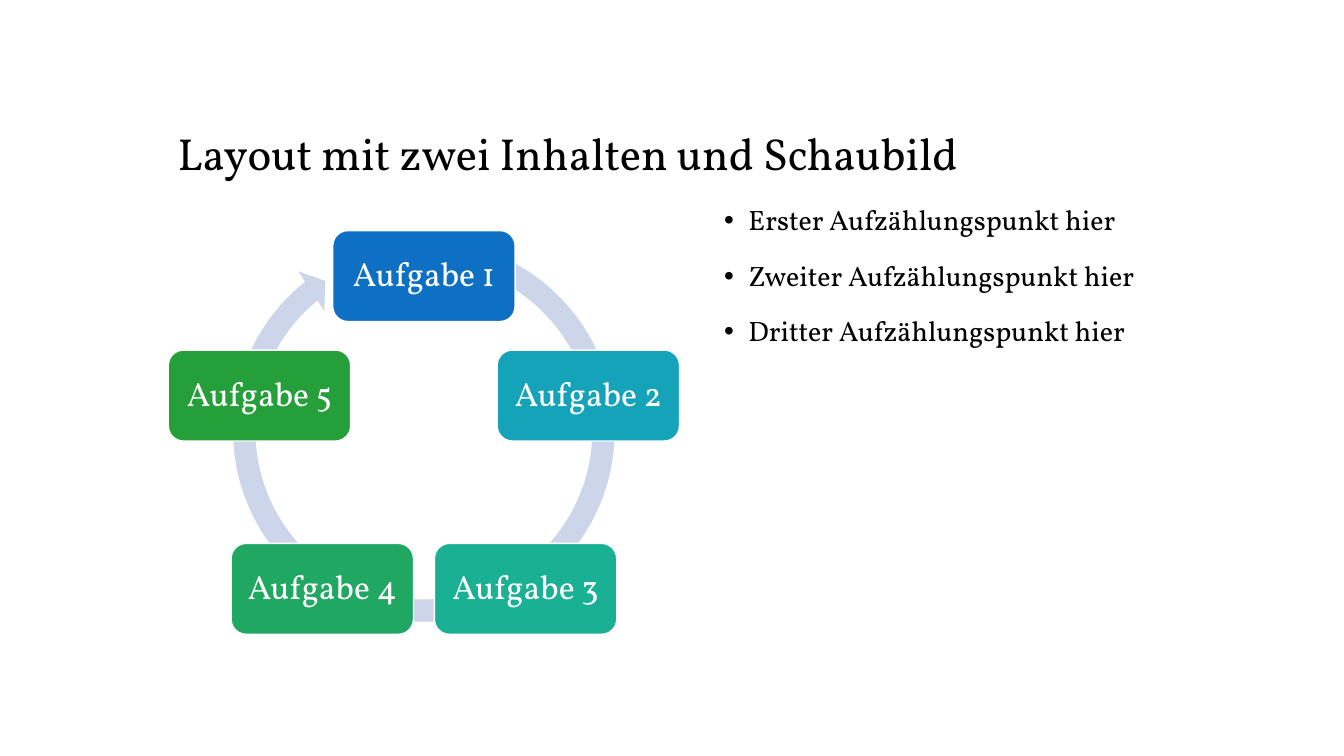
from math import cos, pi, sin

from lxml.etree import SubElement
from pptx import Presentation
from pptx.dml.color import RGBColor
from pptx.enum.shapes import MSO_SHAPE
from pptx.enum.text import MSO_ANCHOR, PP_ALIGN
from pptx.oxml.ns import qn
from pptx.util import Pt

# Content
TITLE = "Layout mit zwei Inhalten und Schaubild"
POINTS = [
    "Erster Aufzählungspunkt hier",
    "Zweiter Aufzählungspunkt hier",
    "Dritter Aufzählungspunkt hier",
]
TASKS = [
    ("Aufgabe 1", "0E70C2"),
    ("Aufgabe 2", "14A3B9"),
    ("Aufgabe 3", "1AB094"),
    ("Aufgabe 4", "20A762"),
    ("Aufgabe 5", "259F39"),
]

THEME = {
    "font": "Vollkorn",
    "text": "000000",
    "light": "FFFFFF",
    "ring": "CCD5E9",
    "title_size": 32,
    "point_size": 20,
    "task_size": 24,
    "line_spacing": 0.9,
}

# Layout in points
TITLE_BOX = (119.8, 42.2, 756, 90)
POINTS_BOX = (510.2, 144, 365.8, 329.8)
POINT_INDENT = 17.3
POINT_GAP = 18
CYCLE_X, CYCLE_Y, CYCLE_RADIUS = 302.8, 320.7, 123.5
TASK_WIDTH, TASK_HEIGHT = 130.3, 65
RING_SIZE, RING_Y = 290.2, 307.9
RING_ADJUSTMENTS = (0.055, 3.307, 138.718, 173.279, 0.058)


def color(key):
    return RGBColor.from_string(THEME.get(key, key))


def style(paragraph, size, ink):
    paragraph.line_spacing = THEME["line_spacing"]
    font = paragraph.font
    font.name = THEME["font"]
    font.size = Pt(THEME[size])
    font.color.rgb = color(ink)


def add_frame(slide, box):
    frame = slide.shapes.add_textbox(*map(Pt, box)).text_frame
    frame.word_wrap = True
    return frame


def add_centred(slide, kind, x, y, width, height, fill):
    shape = slide.shapes.add_shape(
        kind, Pt(x - width / 2), Pt(y - height / 2), Pt(width), Pt(height))
    shape.shadow.inherit = False
    shape.fill.solid()
    shape.fill.fore_color.rgb = color(fill)
    return shape


def add_title(slide):
    heading = add_frame(slide, TITLE_BOX)
    heading.vertical_anchor = MSO_ANCHOR.BOTTOM
    heading.text = TITLE
    style(heading.paragraphs[0], "title_size", "text")


def add_points(slide):
    points = add_frame(slide, POINTS_BOX)
    points.text = "\n".join(POINTS)
    for index, point in enumerate(points.paragraphs):
        properties = point._p.get_or_add_pPr()
        properties.set("marL", str(Pt(POINT_INDENT)))
        properties.set("indent", str(-Pt(POINT_INDENT)))
        SubElement(properties, qn("a:buFont"), typeface="Arial")
        SubElement(properties, qn("a:buChar"), char="•")
        style(point, "point_size", "text")
        if index:
            point.space_before = Pt(POINT_GAP)


def add_cycle(slide):
    # Ring arrow behind the tasks
    ring = add_centred(slide, MSO_SHAPE.CIRCULAR_ARROW, CYCLE_X, RING_Y,
                       RING_SIZE, RING_SIZE, "ring")
    ring.line.fill.background()
    for index, value in enumerate(RING_ADJUSTMENTS):
        ring.adjustments[index] = value

    # Tasks spread clockwise from the top
    for index, (label, fill) in enumerate(TASKS):
        angle = 2 * pi * index / len(TASKS)
        task = add_centred(slide, MSO_SHAPE.ROUNDED_RECTANGLE,
                           CYCLE_X + CYCLE_RADIUS * sin(angle),
                           CYCLE_Y - CYCLE_RADIUS * cos(angle),
                           TASK_WIDTH, TASK_HEIGHT, fill)
        task.line.color.rgb = color("light")
        task.line.width = Pt(1)
        frame = task.text_frame
        frame.vertical_anchor = MSO_ANCHOR.MIDDLE
        frame.text = label
        frame.paragraphs[0].alignment = PP_ALIGN.CENTER
        style(frame.paragraphs[0], "task_size", "light")


def main():
    deck = Presentation()
    deck.slide_width, deck.slide_height = Pt(960), Pt(540)
    slide = deck.slides.add_slide(deck.slide_layouts[6])
    add_title(slide)
    add_points(slide)
    add_cycle(slide)
    deck.save("out.pptx")


if __name__ == "__main__":
    main()
